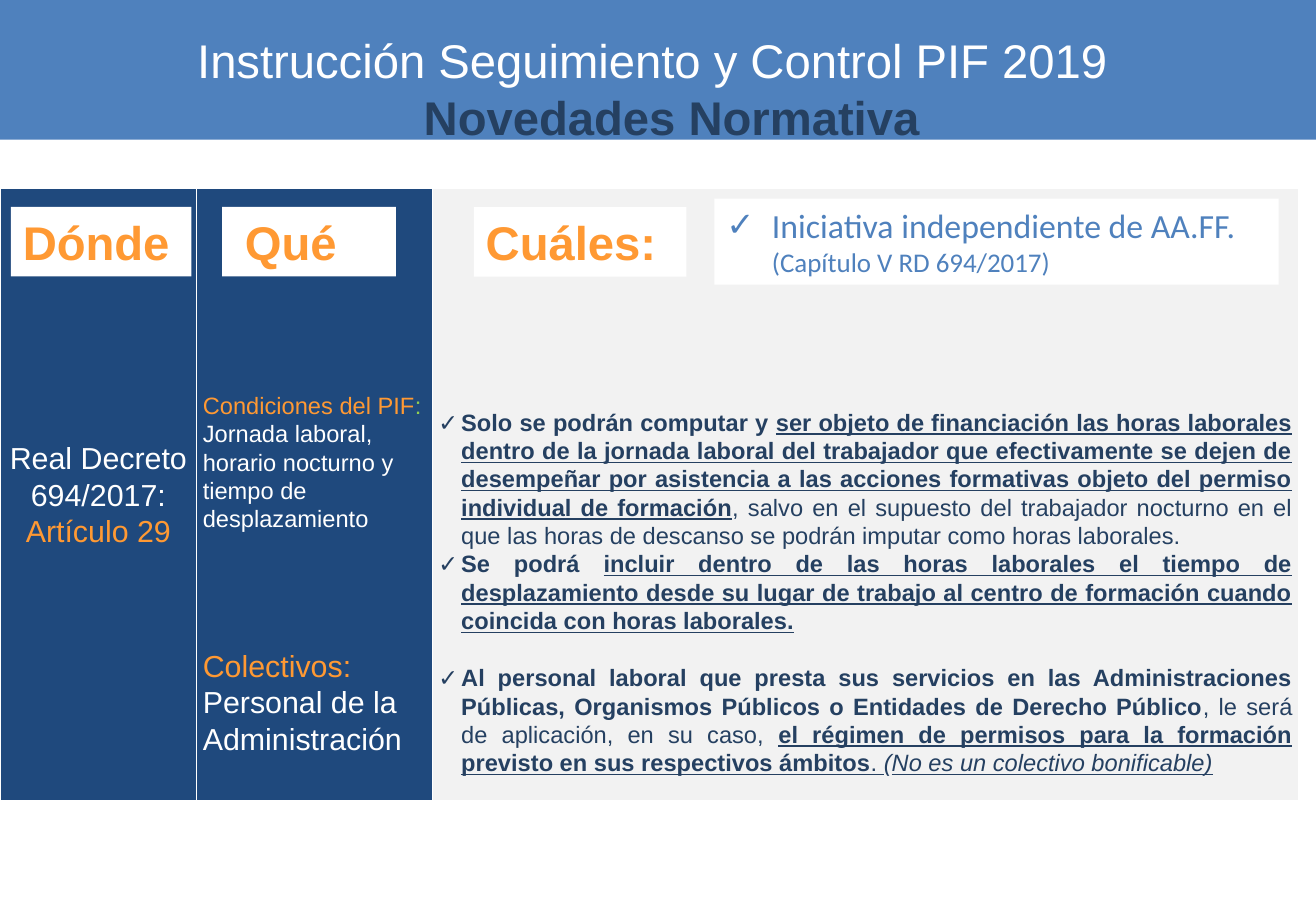
from pptx import Presentation
from pptx.dml.color import RGBColor
from pptx.enum.shapes import MSO_SHAPE
from pptx.enum.text import MSO_ANCHOR, MSO_AUTO_SIZE, PP_ALIGN
from pptx.oxml.ns import qn
from pptx.util import Pt
from lxml.etree import SubElement


class Theme:
    band = "4F81BD"
    navy = "1F497D"
    ink = "254061"
    orange = "FF9933"
    green = "92D050"
    pale = "F2F2F2"
    white = "FFFFFF"
    heading = 28
    topic = 20
    large = 18
    note = 16
    body = 14
    spacing = 1.07


def add_text(paragraph, text, size=Theme.body, color=Theme.white, font="Arial",
             bold=False, italic=False, underline=False):
    run = paragraph.add_run()
    run.text = text
    run.font.name = font
    run.font.size = Pt(size)
    run.font.color.rgb = RGBColor.from_string(color)
    run.font.bold = bold
    run.font.italic = italic
    run.font.underline = underline


def add_bullet(paragraph, indent):
    properties = paragraph._p.get_or_add_pPr()
    properties.set("marL", str(Pt(indent)))
    properties.set("indent", str(-Pt(indent)))
    SubElement(properties, qn("a:buFont")).set("typeface", "Arial")
    SubElement(properties, qn("a:buChar")).set("char", "✓")


prs = Presentation()
prs.slide_width = Pt(780)
prs.slide_height = Pt(540)
slide = prs.slides.add_slide(prs.slide_layouts[5])
shapes = slide.shapes

boxes = []
for left, top, width, height, fill in [
    (0, 0, 780, 82.8, Theme.band),
    (280.8, 122.8, 126, 41.2, Theme.white),
    (6.4, 122.6, 107, 41.2, Theme.white),
    (131.7, 122.6, 103, 41.2, Theme.white),
    (423.5, 117.8, 334.5, 51, Theme.white),
]:
    box = shapes.add_shape(MSO_SHAPE.RECTANGLE, Pt(left), Pt(top), Pt(width), Pt(height))
    box.shadow.inherit = False
    box.fill.solid()
    box.fill.fore_color.rgb = RGBColor.from_string(fill)
    box.line.fill.background()
    box.text_frame.word_wrap = True
    box.text_frame.vertical_anchor = MSO_ANCHOR.TOP
    box.text_frame.paragraphs[0].alignment = PP_ALIGN.LEFT
    boxes.append(box)
band, which_box, where_box, what_box, topic_box = boxes

for heading_box, heading in [(which_box, "Cuáles:"), (where_box, "Dónde"), (what_box, "Qué")]:
    add_text(heading_box.text_frame.paragraphs[0], heading,
             size=Theme.heading, color=Theme.orange, bold=True)
what_box.text_frame.margin_left = Pt(13.5)

topic = topic_box.text_frame.paragraphs[0]
add_bullet(topic, 27)
add_text(topic, "Iniciativa independiente de AA.FF.", size=Theme.topic, color=Theme.band, font="Calibri")
topic.add_line_break()
add_text(topic, "(Capítulo V RD 694/2017)", size=Theme.note, color=Theme.band, font="Calibri")

rules_frame = shapes.add_table(1, 3, Pt(0), Pt(111.6), Pt(769.7), Pt(362.9))
rules = rules_frame.table
for column, width in zip(rules.columns, (116.6, 139.7, 513.4)):
    column.width = Pt(width)
where, what, which = rules.rows[0].cells
for cell, fill, anchor, bottom in [
    (where, Theme.navy, MSO_ANCHOR.MIDDLE, 0),
    (what, Theme.navy, MSO_ANCHOR.BOTTOM, 26),
    (which, Theme.pale, MSO_ANCHOR.BOTTOM, 14),
]:
    cell.fill.solid()
    cell.fill.fore_color.rgb = RGBColor.from_string(fill)
    cell.vertical_anchor = anchor
    cell.margin_left = cell.margin_right = Pt(3.6)
    cell.margin_top = Pt(0)
    cell.margin_bottom = Pt(bottom)

strong = {"bold": True}
key = {"bold": True, "underline": True}
cell_paragraphs = [
    (where, PP_ALIGN.CENTER, 0, [("Real Decreto 694/2017:", {"size": Theme.large})]),
    (where, PP_ALIGN.CENTER, 0, [("Artículo 29", {"size": Theme.large, "color": Theme.orange})]),
    (what, PP_ALIGN.LEFT, 0, [
        ("Condiciones del PIF", {"color": Theme.orange}),
        (": ", {"color": Theme.green}),
        ("Jornada laboral, horario nocturno y tiempo de desplazamiento", {}),
    ]),
    (what, PP_ALIGN.LEFT, 68, [("Colectivos:", {"size": Theme.large, "color": Theme.orange})]),
    (what, PP_ALIGN.LEFT, 0, [("Personal de la Administración", {"size": Theme.large})]),
    (which, PP_ALIGN.JUSTIFY, 0, [
        ("Solo se podrán computar y ", strong),
        ("ser objeto de financiación las horas laborales dentro de la jornada laboral del "
         "trabajador que efectivamente se dejen de desempeñar por asistencia a las acciones "
         "formativas objeto del permiso individual de formación", key),
        (", salvo en el supuesto del trabajador nocturno en el que las horas de descanso "
         "se podrán imputar como horas laborales.", {}),
    ]),
    (which, PP_ALIGN.JUSTIFY, 0, [
        ("Se podrá ", strong),
        ("incluir dentro de las horas laborales el tiempo de desplazamiento desde su lugar "
         "de trabajo al centro de formación cuando coincida con horas laborales.", key),
    ]),
    (which, PP_ALIGN.JUSTIFY, 17, [
        ("Al personal laboral que presta sus servicios en las Administraciones Públicas, "
         "Organismos Públicos o Entidades de Derecho Público", strong),
        (", le será de aplicación, en su caso, ", {}),
        ("el régimen de permisos para la formación previsto en sus respectivos ámbitos", key),
        (". ", {"underline": True}),
        ("(", {"italic": True}),
        ("No es un colectivo bonificable)", {"italic": True, "underline": True}),
    ]),
]
for cell, alignment, space, runs in cell_paragraphs:
    frame = cell.text_frame
    paragraph = frame.add_paragraph() if frame.text else frame.paragraphs[0]
    paragraph.alignment = alignment
    paragraph.line_spacing = Theme.spacing
    if space:
        paragraph.space_before = Pt(space)
    if cell is which:
        add_bullet(paragraph, 13.5)
    for text, style in runs:
        add_text(paragraph, text, **({"color": Theme.ink} | style if cell is which else style))

shapes._spTree.insert(shapes._spTree.index(band._element) + 1, rules_frame._element)

title = shapes.title
shapes._spTree.append(title._element)
title.left, title.top, title.width, title.height = Pt(38), Pt(15), Pt(697), Pt(75)
title_frame = title.text_frame
title_frame.word_wrap = True
title_frame.auto_size = MSO_AUTO_SIZE.NONE
title_frame.vertical_anchor = MSO_ANCHOR.TOP
subject = title_frame.paragraphs[0]
news = title_frame.add_paragraph()
news._p.get_or_add_pPr().set("marL", str(Pt(23)))
add_text(subject, "Instrucción Seguimiento y Control PIF 2019", size=Theme.heading)
add_text(news, "Novedades Normativa", size=Theme.heading, color=Theme.ink, bold=True)
for line in (subject, news):
    line.alignment = PP_ALIGN.CENTER

prs.save("out.pptx")
